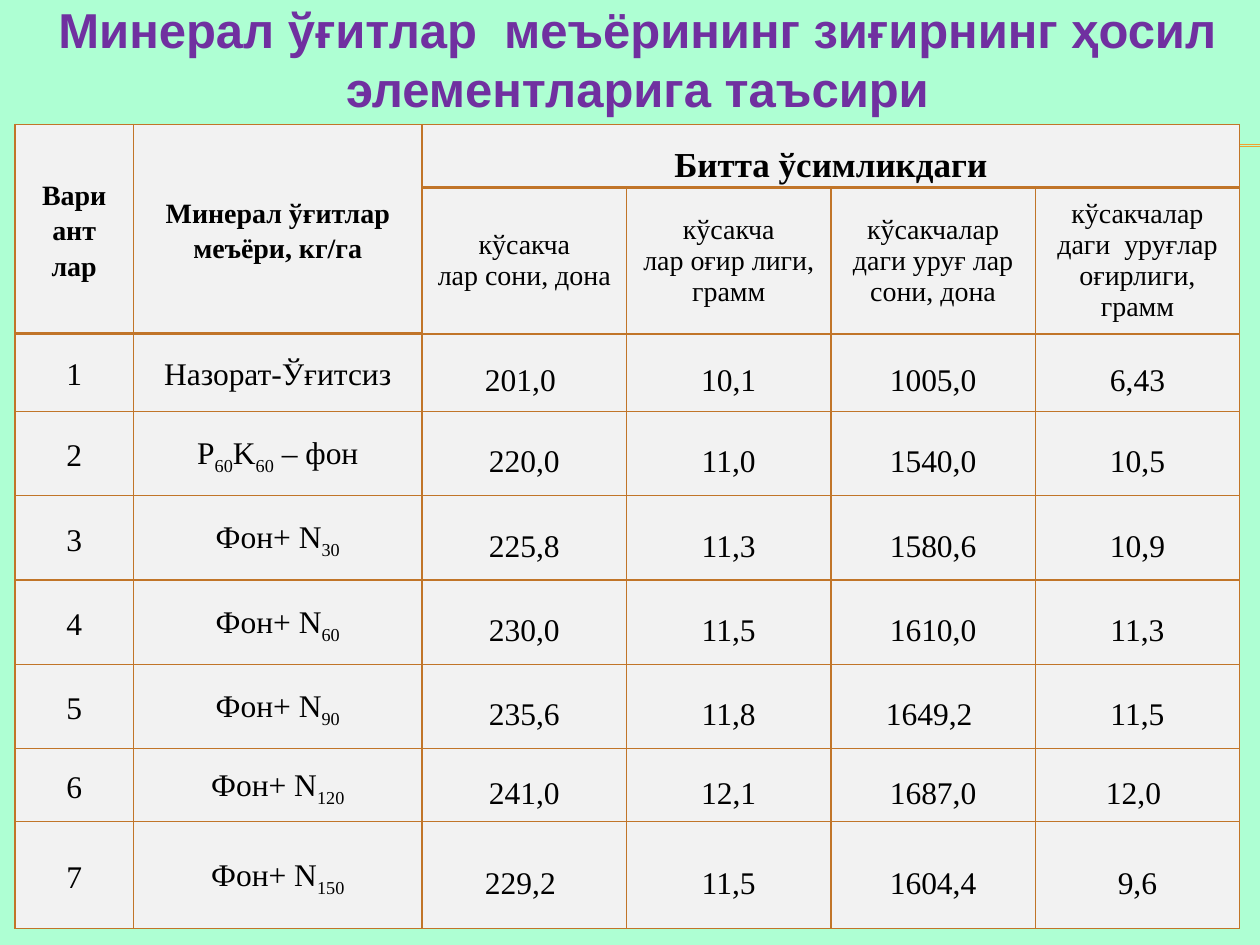
import pptx
import pptx.dml.color
import pptx.enum.shapes
import pptx.enum.text
import pptx.oxml
import pptx.oxml.ns
import pptx.util

Cm = pptx.util.Cm
Pt = pptx.util.Pt
RGBColor = pptx.dml.color.RGBColor
CENTER = pptx.enum.text.PP_ALIGN.CENTER
MIDDLE = pptx.enum.text.MSO_ANCHOR.MIDDLE

MINT = RGBColor(0xAE, 0xFF, 0xD3)
AMBER = RGBColor(0xF0, 0xA2, 0x2E)
PURPLE = RGBColor(0x70, 0x30, 0xA0)
BROWN = RGBColor(0xC1, 0x75, 0x29)
LIGHT_GRAY = RGBColor(0xF2, 0xF2, 0xF2)
BLACK = RGBColor(0, 0, 0)

HEADING = {"size": Pt(28), "name": "Arial", "bold": True}
GROUP_HEAD = {"size": Pt(20), "name": "Times New Roman", "bold": True}
COLUMN_HEAD = {**GROUP_HEAD, "size": Pt(16)}
SUBHEAD = {**COLUMN_HEAD, "bold": False}
BODY = {**SUBHEAD, "size": Pt(18)}

COLUMN_WIDTHS = [2.39, 5.82] + [4.12] * 4
ROW_HEIGHTS = [1.27, 2.95, 1.56] + [1.7] * 4 + [1.47, 2.16]

HEADERS = {
    (0, 0): ("Вари\nант\nлар", COLUMN_HEAD, 1.15),
    (0, 1): ("Минерал ўғитлар меъёри, кг/га", COLUMN_HEAD, 1.15),
    (0, 2): ("Битта ўсимликдаги", GROUP_HEAD, 1.5),
    (1, 2): ("кўсакча\nлар сони, дона", SUBHEAD, 1.0),
    (1, 3): ("кўсакча\nлар оғир лиги, грамм", SUBHEAD, 1.0),
    (1, 4): ("кўсакчалар\nдаги уруғ лар сони, дона", SUBHEAD, 1.0),
    (1, 5): ("кўсакчалар\nдаги  уруғлар оғирлиги,\nграмм", SUBHEAD, 1.0),
}
VARIANTS = [
    ("1", "Назорат-Ўғитсиз", "201,0 ", "10,1", "1005,0", "6,43"),
    ("2", "P~60~K~60~ – фон", "220,0", "11,0", "1540,0", "10,5"),
    ("3", "Фон+ N~30", "225,8", "11,3", "1580,6", "10,9"),
    ("4", "Фон+ N~60", "230,0", "11,5", "1610,0", "11,3"),
    ("5", "Фон+ N~90", "235,6", "11,8", "1649,2 ", "11,5"),
    ("6", "Фон+ N~120", "241,0", "12,1", "1687,0", "12,0 "),
    ("7", "Фон+ N~150", "229,2 ", "11,5", "1604,4", "9,6"),
]


def write_text(frame, text, font_format, color, spacing=1.0):
    """Fill a text frame; newlines part paragraphs, tildes enclose subscripts."""
    for index, line in enumerate(text.split("\n")):
        paragraph = frame.add_paragraph() if index else frame.paragraphs[0]
        paragraph.alignment = CENTER
        paragraph.line_spacing = spacing
        for part, piece in enumerate(line.split("~")):
            if not piece:
                continue
            run = paragraph.add_run()
            run.text = piece
            for attribute, value in font_format.items():
                setattr(run.font, attribute, value)
            run.font.color.rgb = color
            if part % 2:
                run._r.get_or_add_rPr().set("baseline", "-25000")


def bottom_width(row, column):
    """Border width in points below a cell: heavy under the headings."""
    return 2 if row == 0 or (row == 1 and column < 2) else 1


presentation = pptx.Presentation()
presentation.slide_width = Cm(25.4)
presentation.slide_height = Cm(19.05)
slide = presentation.slides.add_slide(presentation.slide_layouts[6])
slide.background.fill.solid()
slide.background.fill.fore_color.rgb = MINT

for rule_y in (2.92, 2.95):
    rule = slide.shapes.add_connector(
        pptx.enum.shapes.MSO_CONNECTOR.STRAIGHT,
        Cm(1.42), Cm(rule_y), Cm(25.4), Cm(rule_y))
    rule.line.color.rgb = AMBER
    rule.line.width = Pt(0.75)
    rule._element.spPr.append(pptx.oxml.parse_xml(
        f"<a:effectLst {pptx.oxml.ns.nsdecls('a')}/>"))

heading = slide.shapes.add_textbox(Cm(0.3), Cm(0), Cm(25.1), Cm(2.34)).text_frame
heading_layout = {"word_wrap": True, "vertical_anchor": MIDDLE,
                  "margin_top": 0, "margin_bottom": 0}
for attribute, value in heading_layout.items():
    setattr(heading, attribute, value)
write_text(heading, "Минерал ўғитлар  меъёрининг зиғирнинг ҳосил\nэлементларига таъсири",
           HEADING, PURPLE)

yields = slide.shapes.add_table(
    len(ROW_HEIGHTS), len(COLUMN_WIDTHS), Cm(0.3), Cm(2.51),
    Cm(sum(COLUMN_WIDTHS)), Cm(sum(ROW_HEIGHTS))).table
yields.first_row = False
yields.horz_banding = False
for column, width in zip(yields.columns, COLUMN_WIDTHS):
    column.width = Cm(width)
for row, height in zip(yields.rows, ROW_HEIGHTS):
    row.height = Cm(height)

contents = dict(HEADERS)
for row, variant in enumerate(VARIANTS, start=2):
    for column, text in enumerate(variant):
        contents[row, column] = (text, BODY, 1.15 if column < 2 else 1.5)

cell_layout = {"vertical_anchor": MIDDLE, "margin_left": Cm(0.18),
               "margin_right": Cm(0.18), "margin_top": 0, "margin_bottom": 0}
for row in range(len(ROW_HEIGHTS)):
    for column in range(len(COLUMN_WIDTHS)):
        cell = yields.cell(row, column)
        for attribute, value in cell_layout.items():
            setattr(cell, attribute, value)
        border_widths = {"L": 1, "R": 1,
                         "T": bottom_width(row - 1, column),
                         "B": bottom_width(row, column)}
        for side, width in border_widths.items():
            cell._tc.get_or_add_tcPr().append(pptx.oxml.parse_xml(
                f'<a:ln{side} {pptx.oxml.ns.nsdecls("a")} w="{Pt(width)}">'
                f'<a:solidFill><a:srgbClr val="{BROWN}"/></a:solidFill></a:ln{side}>'))
        cell.fill.solid()
        cell.fill.fore_color.rgb = LIGHT_GRAY
        if (row, column) in contents:
            text, font_format, spacing = contents[row, column]
            write_text(cell.text_frame, text, font_format, BLACK, spacing)

for first, last in (((0, 0), (1, 0)), ((0, 1), (1, 1)), ((0, 2), (0, 5))):
    yields.cell(*first).merge(yields.cell(*last))

presentation.save("out.pptx")
